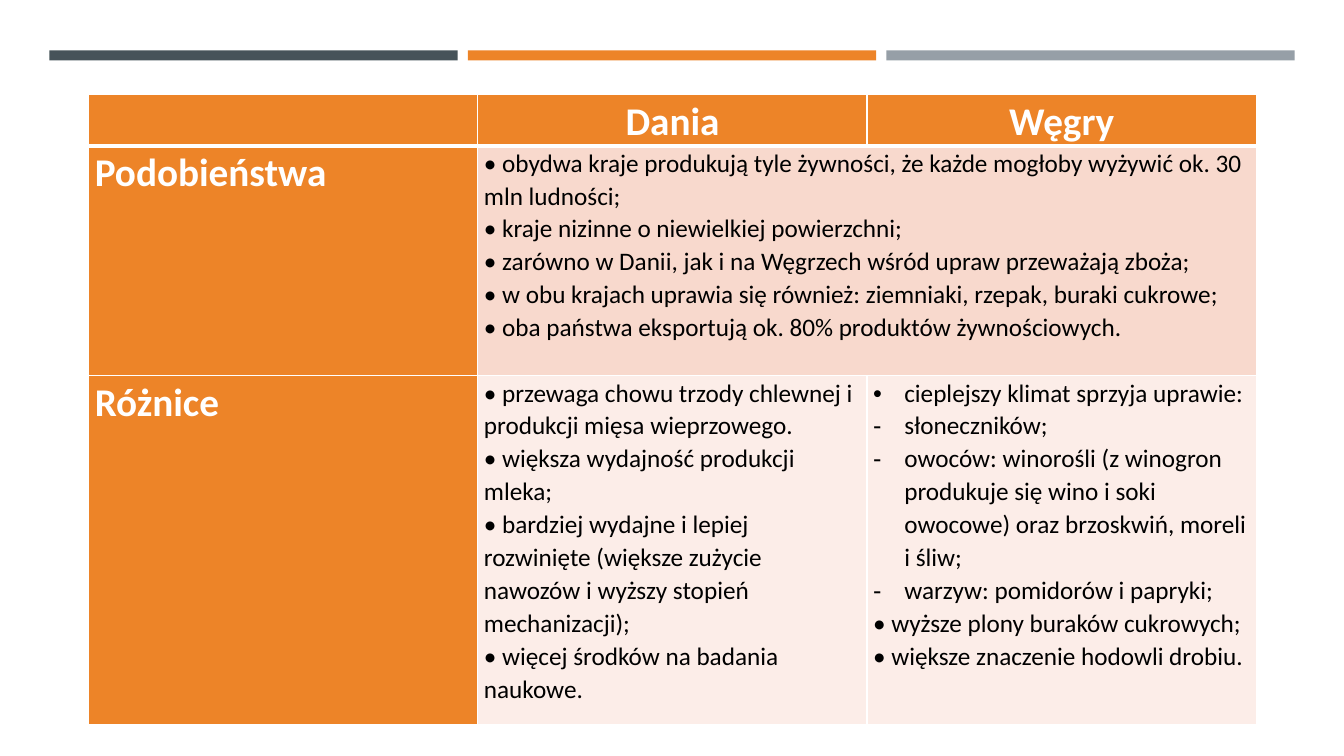
import pptx
import pptx.util
import pptx.dml.color
import pptx.enum.shapes
import pptx.enum.text
import pptx.oxml.ns
from lxml import etree

INCH = pptx.util.Inches
WIDE, HIGH = 13.33, 7.5
FONT = "Calibri"
HUES = {
    "slate": "465359",
    "orange": "ED8428",
    "grey": "969FA7",
    "rose": "F8D9CD",
    "blush": "FCEDE8",
    "white": "FFFFFF",
    "black": "000000",
}
HEADS = ["", "Dania", "Węgry"]
SHARED = [
    ("", "• obydwa kraje produkują tyle żywności, że każde mogłoby wyżywić ok. 30 mln ludności;"),
    ("", "• kraje nizinne o niewielkiej powierzchni;"),
    ("", "• zarówno w Danii, jak i na Węgrzech wśród upraw przeważają zboża;"),
    ("", "• w obu krajach uprawia się również: ziemniaki, rzepak, buraki cukrowe;"),
    ("", "• oba państwa eksportują ok. 80% produktów żywnościowych."),
]
DANISH = [
    ("", "• przewaga chowu trzody chlewnej i produkcji mięsa wieprzowego."),
    ("", "• większa wydajność produkcji mleka;"),
    ("", "• bardziej wydajne i lepiej rozwinięte (większe zużycie nawozów i wyższy stopień mechanizacji);"),
    ("", "• więcej środków na badania naukowe."),
]
MAGYAR = [
    ("•", "cieplejszy klimat sprzyja uprawie:"),
    ("-", "słoneczników;"),
    ("-", "owoców: winorośli (z winogron produkuje się wino i soki owocowe) oraz brzoskwiń, moreli i śliw;"),
    ("-", "warzyw: pomidorów i papryki;"),
    ("", "• wyższe plony buraków cukrowych;"),
    ("", "• większe znaczenie hodowli drobiu."),
]


def color(name):
    """Return the named colour."""
    return pptx.dml.color.RGBColor.from_string(HUES[name])


def child(node, tag, **attrs):
    """Append a drawing element to a node."""
    return etree.SubElement(node, pptx.oxml.ns.qn(tag), attrs)


def edge(cell, base):
    """Draw white borders, the bottom one of the given width."""
    props = cell._tc.get_or_add_tcPr()
    for tag, size in zip(("a:lnL", "a:lnR", "a:lnT", "a:lnB"), (1, 1, 1, base)):
        line = child(props, tag, w=str(pptx.util.Pt(size)))
        child(child(line, "a:solidFill"), "a:srgbClr", val=HUES["white"])


def paint(cell, fill, base=1):
    """Set the borders, fill and margins of a cell."""
    edge(cell, base)
    cell.fill.solid()
    cell.fill.fore_color.rgb = color(fill)
    cell.margin_left = cell.margin_right = INCH(0.06)
    cell.margin_top = cell.margin_bottom = 0


def write(cell, items, size=18, hue="black", bold=False, align="LEFT"):
    """Write pairs of bullet and text as paragraphs of a cell."""
    frame = cell.text_frame
    for index, (mark, text) in enumerate(items):
        para = frame.add_paragraph() if index else frame.paragraphs[0]
        para.alignment = getattr(pptx.enum.text.PP_ALIGN, align)
        para.line_spacing = 1.07
        if mark:
            props = para._p.get_or_add_pPr()
            props.set("marL", str(INCH(0.31)))
            props.set("indent", str(-INCH(0.31)))
            child(props, "a:buFont", typeface="Arial")
            child(props, "a:buChar", char=mark)
        run = para.add_run()
        run.text = text
        run.font.name = FONT
        run.font.size = pptx.util.Pt(size)
        run.font.bold = bold
        run.font.color.rgb = color(hue)


def bars(slide, left, top, width, height):
    """Place three equal bars across the box."""
    gap = 0.1
    part = (width - 2 * gap) / 3
    for index, name in enumerate(("slate", "orange", "grey")):
        bar = slide.shapes.add_shape(
            pptx.enum.shapes.MSO_SHAPE.RECTANGLE,
            INCH(left + index * (part + gap)), INCH(top), INCH(part), INCH(height))
        bar.shadow.inherit = False
        bar.fill.solid()
        bar.fill.fore_color.rgb = color(name)
        bar.line.fill.background()


def compare(slide, left, top, width, height):
    """Fill the box with the table comparing both countries."""
    rows = (0.5, 2.28, height - 2.78)
    grid = slide.shapes.add_table(
        3, 3, INCH(left), INCH(top), INCH(width), INCH(height)).table
    for col in grid.columns:
        col.width = INCH(width / 3)
    for row, tall in zip(grid.rows, rows):
        row.height = INCH(tall)
    for r, fill in enumerate(("orange", "rose", "blush")):
        for c in range(3):
            paint(grid.cell(r, c), fill if c else "orange", 1 if r else 3)
    grid.cell(1, 1).merge(grid.cell(1, 2))
    for c, head in enumerate(HEADS):
        if head:
            write(grid.cell(0, c), [("", head)], 28, "white", True, "CENTER")
    for r, label in enumerate(("Podobieństwa", "Różnice"), 1):
        write(grid.cell(r, 0), [("", label)], 28, "white", True)
    write(grid.cell(1, 1), SHARED)
    write(grid.cell(2, 1), DANISH)
    write(grid.cell(2, 2), MAGYAR)


def main():
    """Build and save the slide."""
    deck = pptx.Presentation()
    deck.slide_width, deck.slide_height = INCH(WIDE), INCH(HIGH)
    slide = deck.slides.add_slide(deck.slide_layouts[6])
    bars(slide, 0.49, 0.5, 12.35, 0.1)
    compare(slide, 0.88, 0.94, 11.58, 6.24)
    deck.save("out.pptx")


if __name__ == "__main__":
    main()
